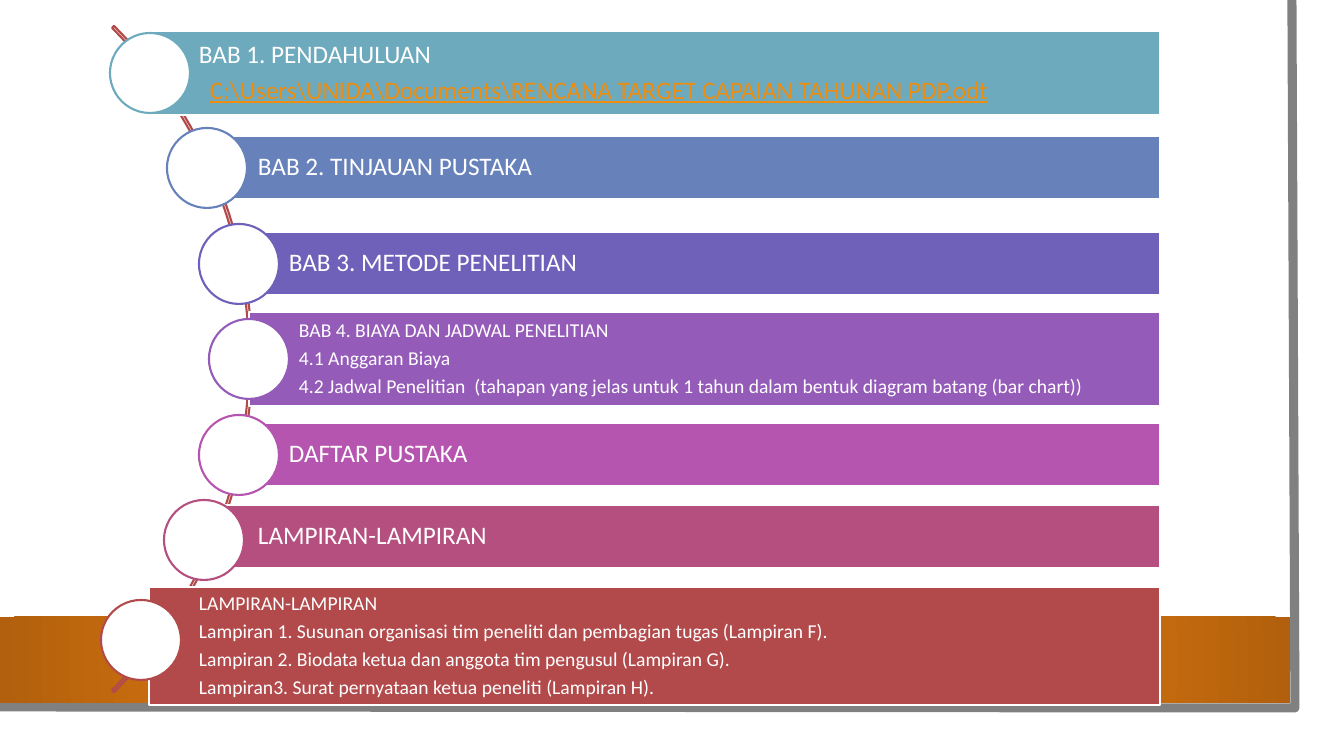
from dataclasses import dataclass

from lxml.etree import SubElement
from pptx import Presentation
from pptx.dml.color import RGBColor
from pptx.enum.shapes import MSO_SHAPE
from pptx.enum.text import MSO_ANCHOR, PP_ALIGN
from pptx.oxml.ns import qn
from pptx.util import Emu, Pt

PX_PER_INCH = 100.8


@dataclass(frozen=True)
class Theme:
    font: str = "Calibri"
    heading: int = 18
    detail: int = 14
    outline: float = 1.5
    frame_width: float = 6.5
    white: str = "FFFFFF"
    frame: str = "808080"
    arc: str = "B24A4B"
    link: str = "EE8E11"
    band_inner: str = "EE8011"
    band_outer: str = "B2600D"


@dataclass(frozen=True)
class Chapter:
    left: int
    top: int
    height: int
    circle_left: int
    circle_top: int
    color: str
    lines: tuple
    size: int = Theme.heading
    align: PP_ALIGN = PP_ALIGN.LEFT
    link: str = ""


THEME = Theme()
BAR_RIGHT = 1160
CIRCLE = 80
TEXT_INSET = 50
LINK_INDENT = 11

CHAPTERS = (
    Chapter(149, 31, 84, 110, 33, "6DAABD", ("BAB 1. PENDAHULUAN",),
            link=r"C:\Users\UNIDA\Documents\RENCANA TARGET CAPAIAN TAHUNAN PDP.odt"),
    Chapter(208, 136, 63, 167, 128, "6781BB", ("BAB 2. TINJAUAN PUSTAKA",)),
    Chapter(239, 232, 63, 199, 224, "6F61BA", ("BAB 3. METODE PENELITIAN",)),
    Chapter(249, 312, 94, 209, 319, "945BB8", (
        "BAB 4. BIAYA DAN JADWAL PENELITIAN",
        "4.1 Anggaran Biaya",
        "4.2 Jadwal Penelitian  (tahapan yang jelas untuk 1 tahun dalam bentuk "
        "diagram batang (bar chart))",
    ), THEME.detail),
    Chapter(239, 423, 63, 199, 415, "B655AF", ("DAFTAR PUSTAKA",)),
    Chapter(208, 505, 63, 164, 500, "B54F7F", ("LAMPIRAN-LAMPIRAN",)),
    Chapter(149, 587, 118, 101, 600, "B24A4B", (
        "LAMPIRAN-LAMPIRAN",
        "Lampiran 1. Susunan organisasi tim peneliti dan pembagian tugas (Lampiran F).",
        "Lampiran 2. Biodata ketua dan anggota tim pengusul (Lampiran G).",
        "Lampiran3. Surat pernyataan ketua peneliti (Lampiran H).",
    ), THEME.detail, PP_ALIGN.JUSTIFY),
)


def px(value):
    return Emu(round(value * 914400 / PX_PER_INCH))


def style_shape(shape, fill=None, line=None, width=THEME.outline):
    shape.shadow.inherit = False
    if fill:
        shape.fill.solid()
        shape.fill.fore_color.rgb = RGBColor.from_string(fill)
    else:
        shape.fill.background()
    if line:
        shape.line.color.rgb = RGBColor.from_string(line)
        shape.line.width = Pt(width)
    else:
        shape.line.fill.background()


def add_preset(page, kind, left, top, width, height, fill=None, line=None):
    shape = page.shapes.add_shape(kind, px(left), px(top), px(width), px(height))
    style_shape(shape, fill, line)
    return shape


def set_radial_gradient(shape, inner, outer):
    shape.fill.gradient()
    gradient = shape.fill._xPr.find(qn("a:gradFill"))
    for child in list(gradient):
        gradient.remove(child)
    stops = SubElement(gradient, qn("a:gsLst"))
    for position, color in ((34000, inner), (100000, outer)):
        stop = SubElement(stops, qn("a:gs"), pos=str(position))
        SubElement(stop, qn("a:srgbClr"), val=color)
    shade = SubElement(gradient, qn("a:path"), path="circle")
    SubElement(shade, qn("a:fillToRect"), l="50000", t="50000", r="50000", b="50000")


def add_backdrop(page):
    add_preset(page, MSO_SHAPE.RECTANGLE, 0, 0, 1320, 733, THEME.white)

    # Grey edge along the right and bottom
    outline = page.shapes.build_freeform(px(1292), px(0))
    outline.add_line_segments([(px(1295), px(708)), (px(-3), px(707))], close=False)
    style_shape(outline.convert_to_shape(), None, THEME.frame, THEME.frame_width)

    # Orange band
    band = add_preset(page, MSO_SHAPE.RECTANGLE, 0, 617, 1290, 86)
    set_radial_gradient(band, THEME.band_inner, THEME.band_outer)


def add_arc(page):
    arc = add_preset(page, MSO_SHAPE.BLOCK_ARC, -690, -112, 942, 942, line=THEME.arc)
    for index, value in enumerate((189, 27, 0.003)):
        arc.adjustments[index] = value


def write_line(para, text, chapter, color=THEME.white):
    para.alignment = chapter.align
    para.line_spacing = 0.9
    para.space_after = Pt(chapter.size * 0.35)
    span = para.add_run()
    span.text = text
    font = para.font
    font.name = THEME.font
    font.size = Pt(chapter.size)
    font.color.rgb = RGBColor.from_string(color)
    return span


def add_chapter(page, chapter):
    bar = add_preset(page, MSO_SHAPE.RECTANGLE, chapter.left, chapter.top,
                     BAR_RIGHT - chapter.left, chapter.height, chapter.color, THEME.white)
    box = bar.text_frame
    box.word_wrap = True
    box.vertical_anchor = MSO_ANCHOR.MIDDLE
    box.margin_left = px(TEXT_INSET)
    box.margin_top = box.margin_right = box.margin_bottom = px(5 if chapter.size > 14 else 4)
    for index, text in enumerate(chapter.lines):
        para = box.add_paragraph() if index else box.paragraphs[0]
        write_line(para, text, chapter)
    if chapter.link:
        para = box.add_paragraph()
        para._p.get_or_add_pPr().set("marL", str(px(LINK_INDENT)))
        write_line(para, chapter.link, chapter, THEME.link)
        para.font.underline = True
    add_preset(page, MSO_SHAPE.OVAL, chapter.circle_left, chapter.circle_top,
               CIRCLE, CIRCLE, THEME.white, chapter.color)


def main():
    deck = Presentation()
    deck.slide_width, deck.slide_height = px(1344), px(756)
    page = deck.slides.add_slide(deck.slide_layouts[6])
    add_backdrop(page)
    add_arc(page)
    for chapter in CHAPTERS:
        add_chapter(page, chapter)
    deck.save("out.pptx")


if __name__ == "__main__":
    main()
